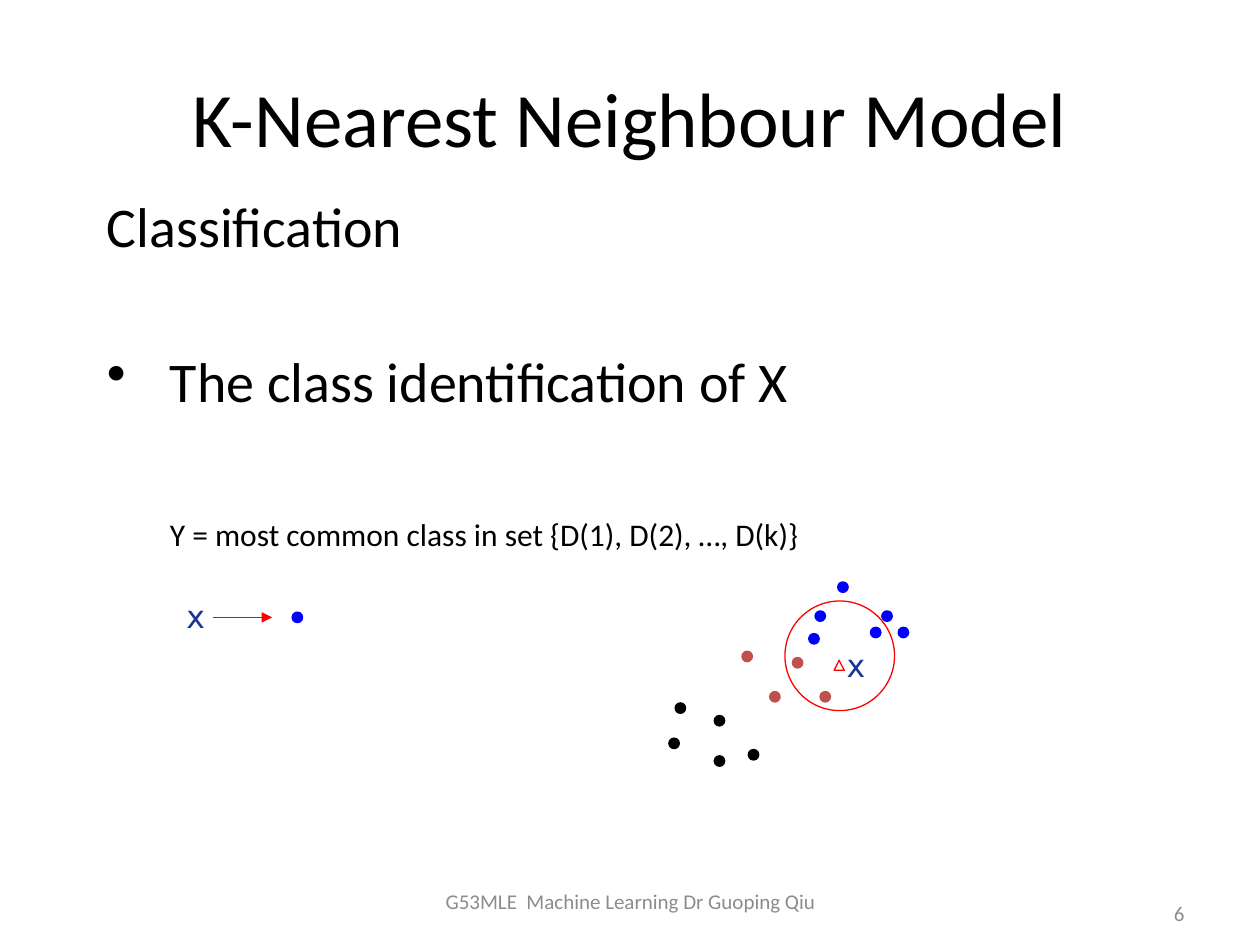
import pptx
import pptx.util
import pptx.dml.color
from pptx.enum.shapes import MSO_SHAPE, MSO_CONNECTOR
from pptx.enum.text import MSO_ANCHOR, MSO_AUTO_SIZE, PP_ALIGN
from pptx.oxml.ns import qn
from lxml import etree

Inches, Pt = pptx.util.Inches, pptx.util.Pt

TITLE = "K-Nearest Neighbour Model"
BODY = [
    # text, size, space before, left margin, indent, bullet
]
BODY = [
    ("Classification", 32, 0, 0.5, -0.5, None),
    ("The class identification of X", 32, 50, 0.5, -0.5, "•"),
    ("Y = most common class in set {D(1), D(2), …, D(k)}", 18, 58, 0.92, -0.42, None),
]
FOOTER = "G53MLE  Machine Learning Dr Guoping Qiu"
PAGE = "6"
DOT = 0.08
CLASSES = {
    "0000FF": [(6.65, 4.62), (6.47, 4.85), (7, 4.85), (7.13, 4.98),
               (6.42, 5.03), (6.91, 4.98), (2.32, 4.86)],
    "C0504D": [(5.89, 5.17), (6.29, 5.22), (6.11, 5.49), (6.51, 5.49)],
    "000000": [(5.36, 5.58), (5.67, 5.68), (5.31, 5.86), (5.94, 5.95), (5.67, 6)],
}
QUERY_LABELS = [(6.62, 5.08), (1.38, 4.69)]
RED = "FF0000"
GREY = "8C8C8C"


def rgb(value):
    return pptx.dml.color.RGBColor.from_string(value)


def style(p, size, color, font="Calibri", align=PP_ALIGN.LEFT):
    p.font.size = Pt(size)
    p.font.name = font
    p.font.color.rgb = rgb(color)
    p.alignment = align


def text_box(s, x, y, w, h, anchor=MSO_ANCHOR.MIDDLE, wrap=True):
    tf = s.shapes.add_textbox(Inches(x), Inches(y), Inches(w), Inches(h)).text_frame
    tf.word_wrap = wrap
    tf.vertical_anchor = anchor
    return tf


def line_of_text(s, box, text, size, color, align):
    tf = text_box(s, *box)
    p = tf.paragraphs[0]
    p.text = text
    style(p, size, color, align=align)
    return tf


def outline(s, kind, x, y, w, line, width, fill=None):
    sp = s.shapes.add_shape(kind, Inches(x), Inches(y), Inches(w), Inches(w))
    sp.shadow.inherit = False
    if fill:
        sp.fill.solid()
        sp.fill.fore_color.rgb = rgb(fill)
    else:
        sp.fill.background()
    sp.line.color.rgb = rgb(line)
    sp.line.width = Pt(width)


def add_body(s):
    tf = text_box(s, 0.75, 1.47, 8.5, 5.09, MSO_ANCHOR.TOP)
    for i, (text, size, before, margin, indent, bullet) in enumerate(BODY):
        p = tf.add_paragraph() if i else tf.paragraphs[0]
        p.text = text
        style(p, size, "000000")
        p.space_before = Pt(before)
        pPr = p._p.get_or_add_pPr()
        pPr.set("marL", str(Inches(margin)))
        pPr.set("indent", str(Inches(indent)))
        mark = etree.Element(qn("a:buChar" if bullet else "a:buNone"))
        if bullet:
            mark.set("char", bullet)
        pPr.find(qn("a:defRPr")).addprevious(mark)


def add_arrow(s, x1, x2, y):
    c = s.shapes.add_connector(MSO_CONNECTOR.STRAIGHT, Inches(x1), Inches(y), Inches(x2), Inches(y))
    c.line.color.rgb = rgb(RED)
    c.line.width = Pt(0.75)
    etree.SubElement(c.line._get_or_add_ln(), qn("a:tailEnd"), type="triangle")
    etree.SubElement(c._element.spPr, qn("a:effectLst"))


def main():
    prs = pptx.Presentation()
    prs.slide_width, prs.slide_height = Inches(10), Inches(7.5)
    s = prs.slides.add_slide(prs.slide_layouts[6])

    line_of_text(s, (0.5, 0.3, 9, 1.25), TITLE, 44, "000000", PP_ALIGN.CENTER)
    add_body(s)
    line_of_text(s, (3.42, 6.95, 3.17, 0.4), FOOTER, 12, GREY, PP_ALIGN.CENTER)
    number = line_of_text(s, (7.17, 6.95, 2.33, 0.4), PAGE, 12, GREY, PP_ALIGN.RIGHT)
    number.margin_top = Inches(0.25)

    for color, dots in CLASSES.items():
        for x, y in dots:
            outline(s, MSO_SHAPE.OVAL, x, y, DOT, color, 1, color)
    outline(s, MSO_SHAPE.ISOSCELES_TRIANGLE, 6.62, 5.24, DOT, RED, 0.75)
    outline(s, MSO_SHAPE.OVAL, 6.23, 4.77, 0.87, RED, 0.75)

    for x, y in QUERY_LABELS:
        tf = text_box(s, x, y, 0.35, 0.4, MSO_ANCHOR.TOP, False)
        tf.auto_size = MSO_AUTO_SIZE.SHAPE_TO_FIT_TEXT
        tf.paragraphs[0].text = "x"
        style(tf.paragraphs[0], 18, "193693", "DejaVu Sans")
    add_arrow(s, 1.69, 2.16, 4.9)
    prs.save("out.pptx")


if __name__ == "__main__":
    main()
